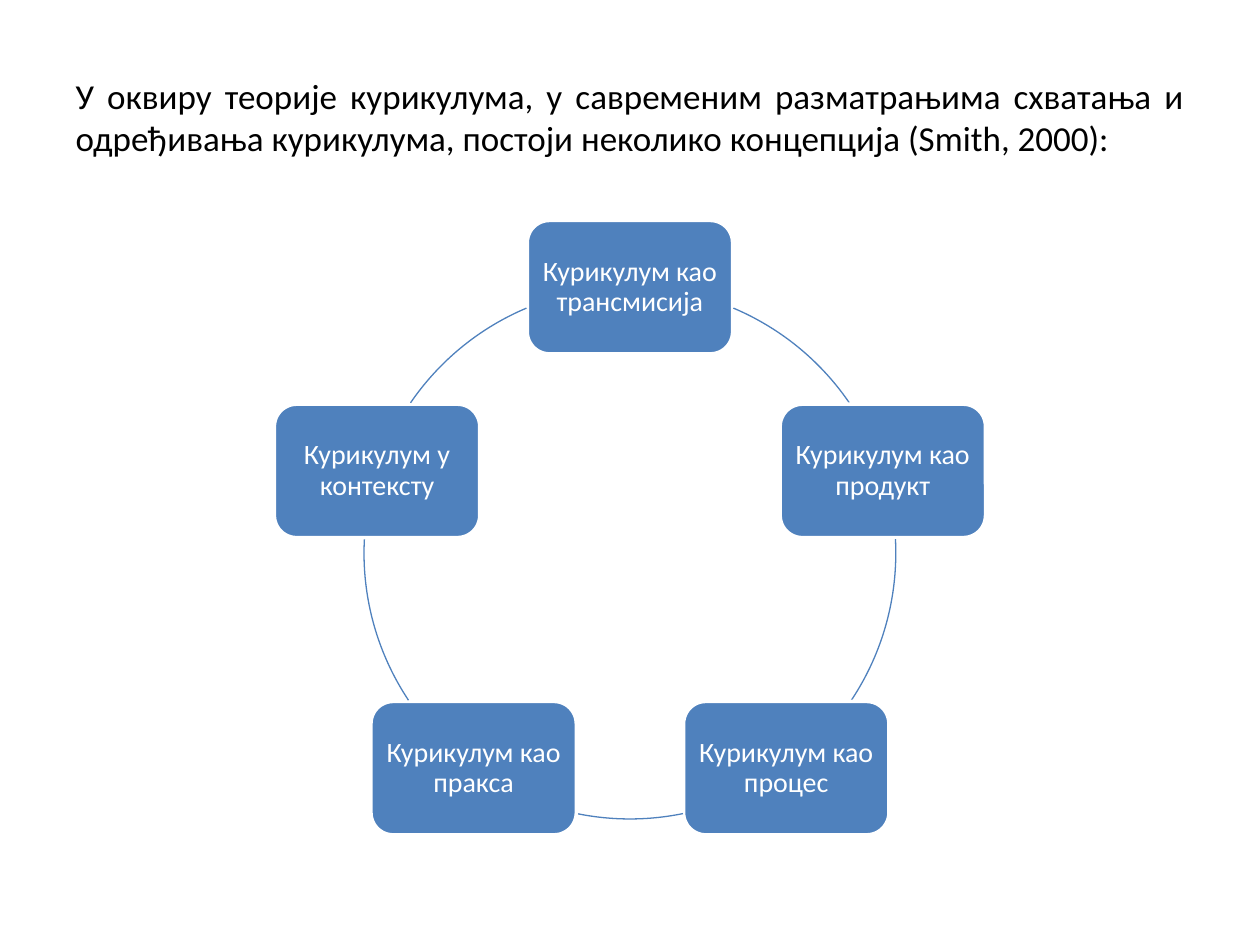
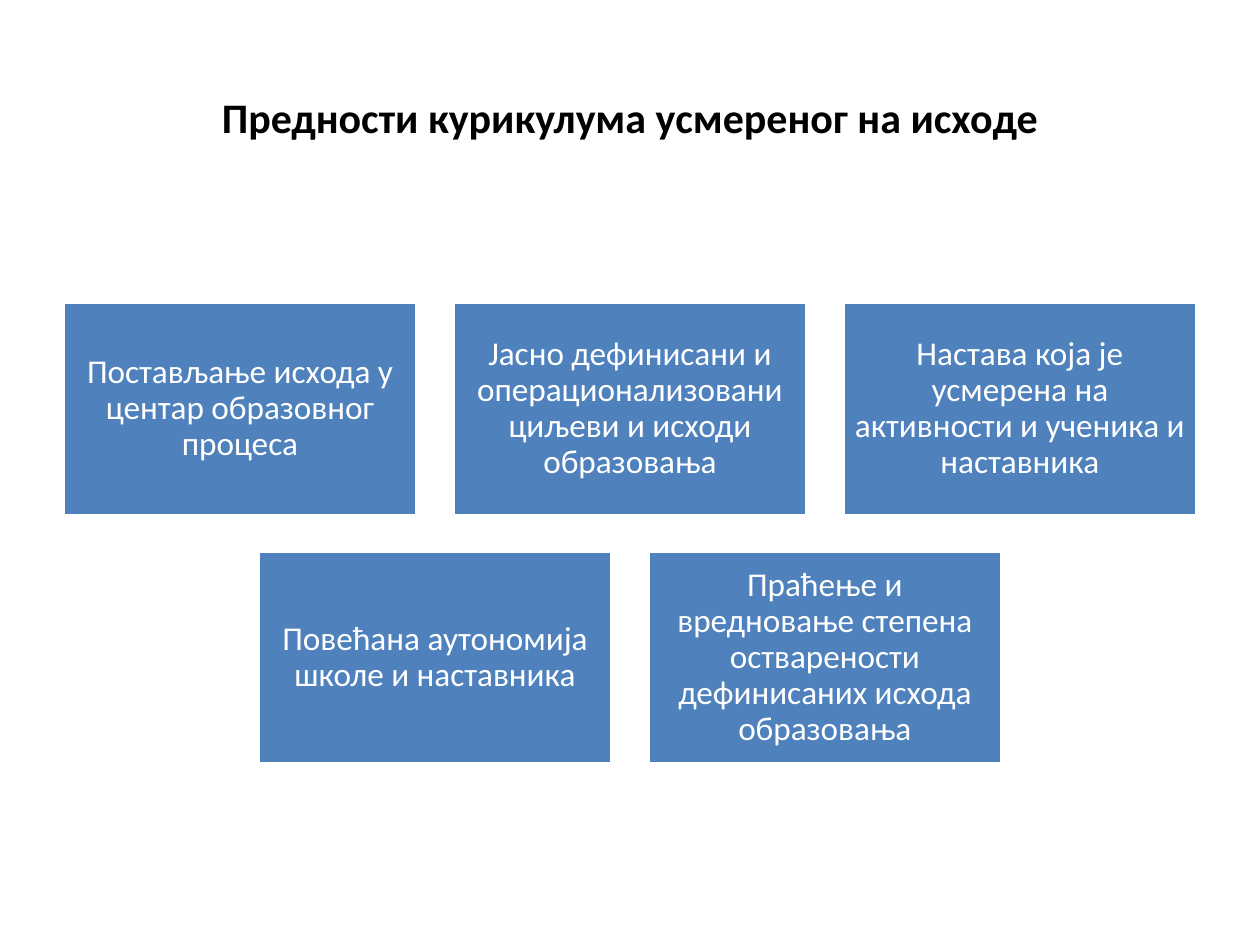
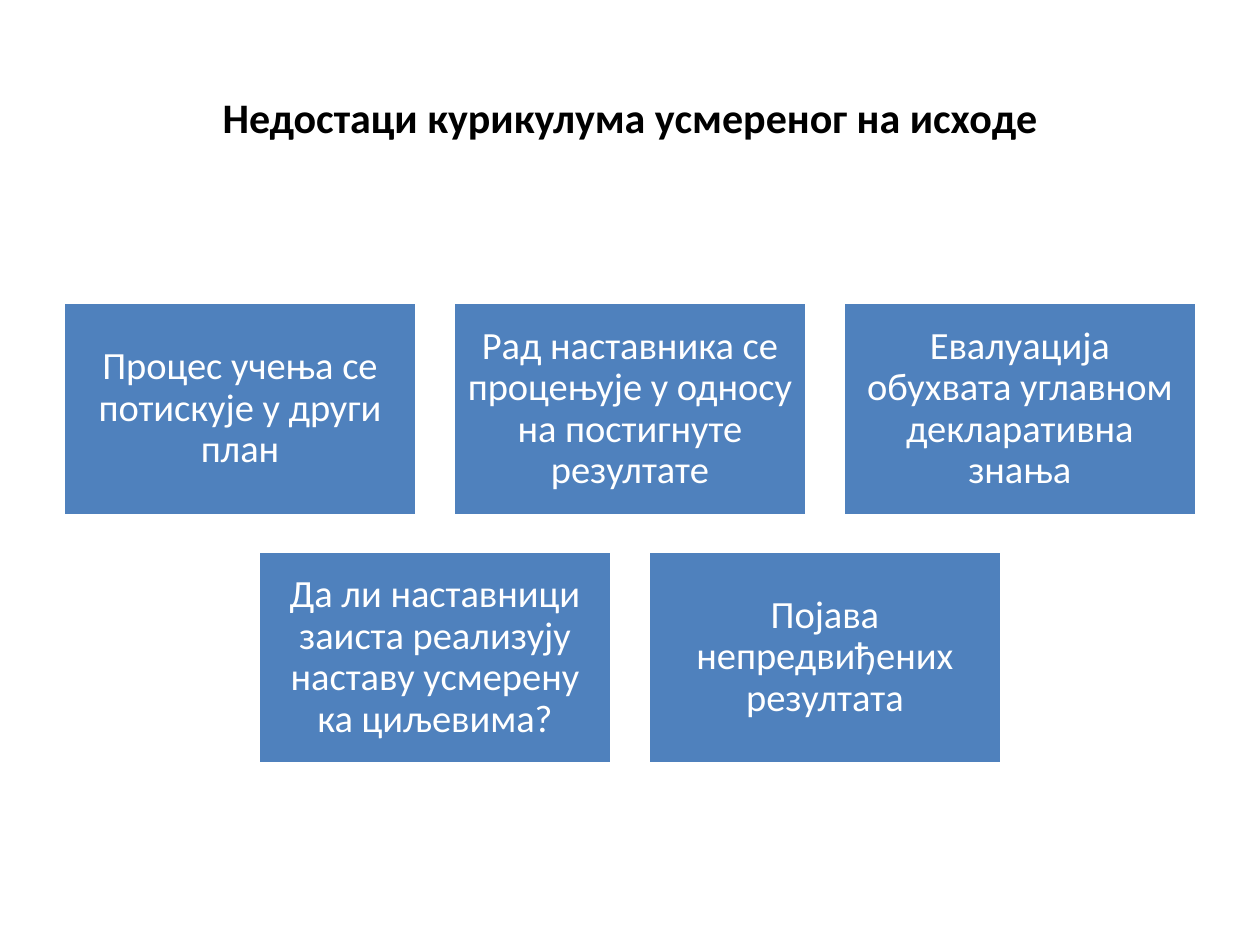
import math
from dataclasses import dataclass

import pptx
import pptx.dml.color
import pptx.enum.shapes
import pptx.enum.text
import pptx.presentation
import pptx.shapes.autoshape
import pptx.slide
import pptx.util

Cm = pptx.util.Cm
Pt = pptx.util.Pt
RGBColor = pptx.dml.color.RGBColor
MSO_SHAPE = pptx.enum.shapes.MSO_SHAPE
PP_ALIGN = pptx.enum.text.PP_ALIGN
MSO_ANCHOR = pptx.enum.text.MSO_ANCHOR

# Shared look
FONT = "Calibri"
BLUE = RGBColor(0x4F, 0x81, 0xBD)
WHITE = RGBColor(0xFF, 0xFF, 0xFF)
BLACK = RGBColor(0x00, 0x00, 0x00)
SLIDE_WIDTH = Cm(25.4)
SLIDE_HEIGHT = Cm(19.05)
TITLE_ONLY_LAYOUT = 5

# Ring of concepts
RING_X, RING_Y, RING_RADIUS = Cm(12.7), Cm(11.15), Cm(5.36)
ARC_ANGLES = [(292.9, 325.6), (357, 33.6), (78.5, 101.5), (146.4, 183), (214.4, 247.1)]
ARC_UNITS_PER_DEGREE = 0.6

# Grid of arguments
GRID_TOP, GRID_GAP, GRID_COLUMNS = Cm(6.1), Cm(0.72), 3


@dataclass(frozen=True)
class BoxStyle:
    outline: MSO_SHAPE
    width: pptx.util.Length
    height: pptx.util.Length
    inset: pptx.util.Length
    text_size: pptx.util.Length


@dataclass(frozen=True)
class ArgumentSlide:
    title: str
    arguments: list[str]
    style: BoxStyle


CONCEPT_STYLE = BoxStyle(MSO_SHAPE.ROUNDED_RECTANGLE, Cm(4.14), Cm(2.69), Cm(0.17), Pt(16))
ADVANTAGE_STYLE = BoxStyle(MSO_SHAPE.RECTANGLE, Cm(7.14), Cm(4.29), Cm(0.2), Pt(19))
DRAWBACK_STYLE = BoxStyle(MSO_SHAPE.RECTANGLE, Cm(7.14), Cm(4.29), Cm(0.23), Pt(22))

# Content
CONCEPTS_INTRO = (
    "У оквиру теорије курикулума, у савременим разматрањима схватања и "
    "одређивања курикулума, постоји неколико концепција (Smith, 2000):"
)
CONCEPTS = [
    "Курикулум као трансмисија",
    "Курикулум као продукт",
    "Курикулум као процес",
    "Курикулум као пракса",
    "Курикулум у контексту",
]
ARGUMENT_SLIDES = [
    ArgumentSlide(
        "Предности курикулума усмереног на исходе",
        [
            "Постављање исхода у центар образовног процеса",
            "Јасно дефинисани и операционализовани циљеви и исходи образовања",
            "Настава која је усмерена на активности и ученика и наставника",
            "Повећана аутономија школе и наставника",
            "Праћење и вредновање степена остварености дефинисаних исхода образовања",
        ],
        ADVANTAGE_STYLE,
    ),
    ArgumentSlide(
        "Недостаци курикулума усмереног на исходе",
        [
            "Процес учења се потискује у други план",
            "Рад наставника се процењује у односу на постигнуте резултате",
            "Евалуација обухвата углавном декларативна знања",
            "Да ли наставници заиста реализују наставу усмерену ка циљевима?",
            "Појава непредвиђених резултата",
        ],
        DRAWBACK_STYLE,
    ),
]


def write_text(
    shape: pptx.shapes.autoshape.Shape,
    text: str,
    size: pptx.util.Length,
    color: RGBColor,
    align: PP_ALIGN = PP_ALIGN.CENTER,
    bold: bool = False,
) -> None:
    frame = shape.text_frame
    frame.word_wrap = True
    frame.vertical_anchor = MSO_ANCHOR.MIDDLE
    paragraph = frame.paragraphs[0]
    paragraph.alignment = align
    run = paragraph.add_run()
    run.text = text
    run.font.name = FONT
    run.font.size = size
    run.font.bold = bold
    run.font.color.rgb = color


def add_titled_slide(
    deck: pptx.presentation.Presentation,
    title: str,
    size: pptx.util.Length = Pt(24),
    align: PP_ALIGN = PP_ALIGN.CENTER,
    bold: bool = True,
) -> pptx.slide.Slide:
    slide = deck.slides.add_slide(deck.slide_layouts[TITLE_ONLY_LAYOUT])
    heading = slide.shapes.title
    heading.left, heading.top = Cm(1.27), Cm(0.76)
    heading.width, heading.height = Cm(22.86), Cm(3.18)
    write_text(heading, title, size, BLACK, align, bold)
    return slide


def add_box(slide: pptx.slide.Slide, style: BoxStyle, left: int, top: int, text: str) -> None:
    box = slide.shapes.add_shape(style.outline, left, top, style.width, style.height)
    box.shadow.inherit = False
    box.fill.solid()
    box.fill.fore_color.rgb = BLUE
    box.line.color.rgb = WHITE
    box.line.width = Pt(2)
    frame = box.text_frame
    frame.margin_left = frame.margin_right = style.inset
    frame.margin_top = frame.margin_bottom = style.inset
    write_text(box, text, style.text_size, WHITE)
    frame.paragraphs[0].line_spacing = 0.9


def add_ring_arc(slide: pptx.slide.Slide, start: float, end: float) -> None:
    arc = slide.shapes.add_shape(
        MSO_SHAPE.ARC, RING_X - RING_RADIUS, RING_Y - RING_RADIUS, 2 * RING_RADIUS, 2 * RING_RADIUS
    )
    arc.shadow.inherit = False
    arc.fill.background()
    arc.line.color.rgb = BLUE
    arc.line.width = Pt(0.75)
    arc.adjustments[0] = start * ARC_UNITS_PER_DEGREE
    arc.adjustments[1] = end * ARC_UNITS_PER_DEGREE


def add_concept_ring(slide: pptx.slide.Slide) -> None:
    for index, (concept, (start, end)) in enumerate(zip(CONCEPTS, ARC_ANGLES)):
        angle = math.tau * index / len(CONCEPTS)
        left = round(RING_X + RING_RADIUS * math.sin(angle) - CONCEPT_STYLE.width / 2)
        top = round(RING_Y - RING_RADIUS * math.cos(angle) - CONCEPT_STYLE.height / 2)
        add_box(slide, CONCEPT_STYLE, left, top, concept)
        add_ring_arc(slide, start, end)


def add_argument_grid(slide: pptx.slide.Slide, arguments: list[str], style: BoxStyle) -> None:
    """Fill rows from the left and centre each row on the slide."""
    for first in range(0, len(arguments), GRID_COLUMNS):
        row = arguments[first:first + GRID_COLUMNS]
        row_width = len(row) * (style.width + GRID_GAP) - GRID_GAP
        row_left = (SLIDE_WIDTH - row_width) // 2
        top = GRID_TOP + first // GRID_COLUMNS * (style.height + GRID_GAP)
        for column, argument in enumerate(row):
            add_box(slide, style, row_left + column * (style.width + GRID_GAP), top, argument)


def main() -> None:
    deck = pptx.Presentation()
    deck.slide_width, deck.slide_height = SLIDE_WIDTH, SLIDE_HEIGHT

    # Concepts of curriculum
    concepts_slide = add_titled_slide(deck, CONCEPTS_INTRO, Pt(20), PP_ALIGN.JUSTIFY, bold=False)
    add_concept_ring(concepts_slide)

    # Advantages and drawbacks
    for content in ARGUMENT_SLIDES:
        add_argument_grid(add_titled_slide(deck, content.title), content.arguments, content.style)

    deck.save("out.pptx")


if __name__ == "__main__":
    main()
